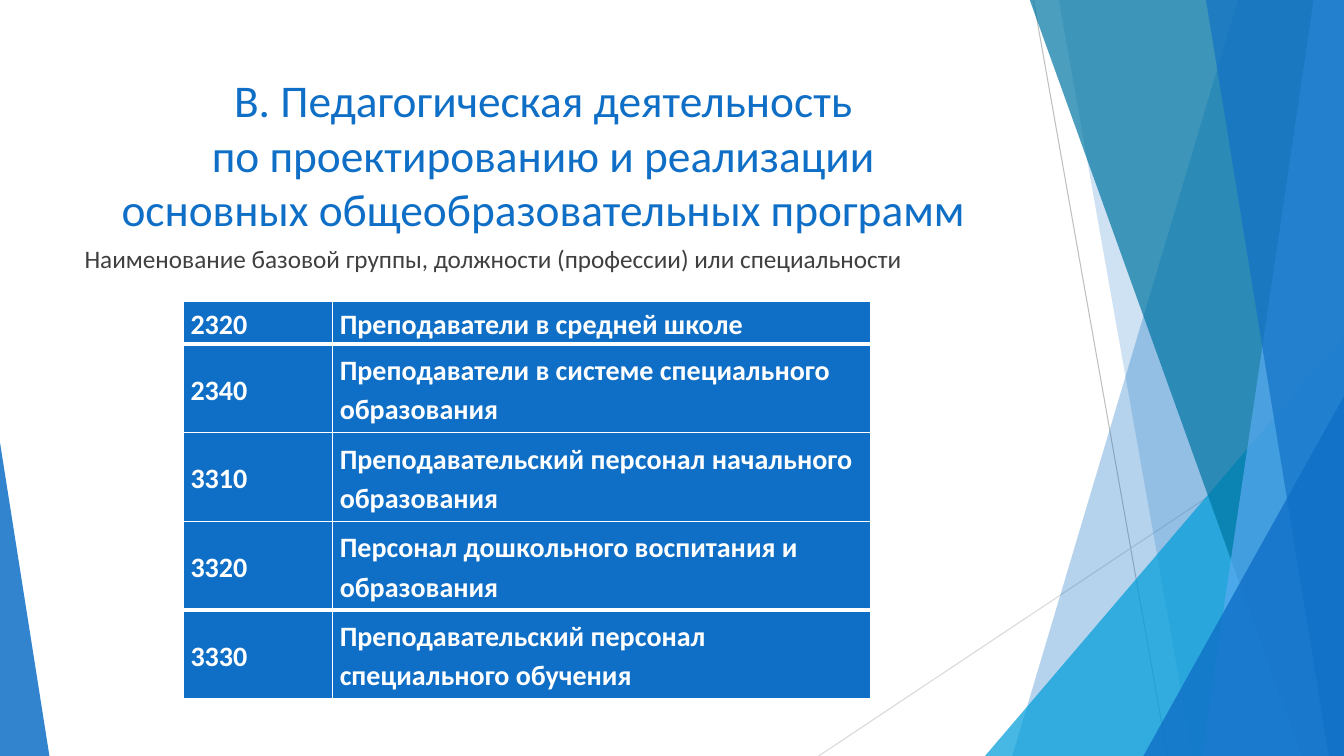
import pptx
import pptx.util
import pptx.dml.color
import pptx.enum.shapes
import pptx.enum.text
import pptx.oxml
import pptx.oxml.ns
from lxml import etree

Inches, Pt = pptx.util.Inches, pptx.util.Pt
ALIGN = pptx.enum.text.PP_ALIGN

TITLE = ("В. Педагогическая деятельность \v"
         "по проектированию и реализации \v"
         "основных общеобразовательных программ ")
SUBTITLE = "Наименование базовой группы, должности (профессии) или специальности"
OCCUPATIONS = [
    ("2320", "Преподаватели в средней школе"),
    ("2340", "Преподаватели в системе специального образования"),
    ("3310", "Преподавательский персонал начального образования"),
    ("3320", "Персонал дошкольного воспитания и образования"),
    ("3330", "Преподавательский персонал специального обучения"),
]

THEME = {
    "font": "Calibri", "title_size": 32.4, "subtitle_size": 18, "table_size": 20,
    "blue": "0F6FC6", "sky": "009DD9", "teal": "0076A3", "light": "59AAF2",
    "text": "404040", "white": "FFFFFF", "gray": "BFBFBF", "pale": "D9D9D9",
}

WIDTH, HEIGHT = 13.33, 7.5
BAND_TOP = -0.01

# Start, end, colour
RAYS = [
    ((10.25, 0), (11.58, HEIGHT), "gray"),
    ((WIDTH, 4.03), (8.12, HEIGHT), "pale"),
]
# Back to front. Bands reach the right edge: (kind, top x, bottom x, colour, opacity %)
# Triangles stand on the bottom edge: (kind, left, top, width, apex, colour, opacity %)
FACETS = [
    ("band", 12.28, 10.04, "blue", 30),
    ("band", 10.5, 11.83, "blue", 20),
    ("triangle", 9.77, 3.33, 3.56, 1, "sky", 72),
    ("band", 10.21, 12.91, "teal", 70),
    ("band", 13.03, 11.92, "light", 70),
    ("band", 11.96, 13.18, "blue", 65),
    ("triangle", 11.34, 3.93, 1.99, 1, "blue", 80),
    ("triangle", 0, 4.39, 0.49, 0, "blue", 85),
]

TABLE_LEFT, TABLE_TOP = 1.82, 2.99
COLUMN_WIDTHS = [1.48, 5.33]
ROW_HEIGHTS = [0.42] + [0.88] * 4
THIN, THICK = 1, 3
# Widths of the horizontal rules, from above the first row to below the last
RULES = [THIN, THICK, THIN, THIN, THICK, THIN]


def color(name):
    return pptx.dml.color.RGBColor.from_string(THEME[name])


def set_font(paragraph, size, color_name, bold=False):
    paragraph.font.name = THEME["font"]
    paragraph.font.size = Pt(size)
    paragraph.font.bold = bold
    paragraph.font.color.rgb = color(color_name)


def paint(facet, color_name, opacity):
    facet.shadow.inherit = False
    facet.line.fill.background()
    facet.fill.solid()
    facet.fill.fore_color.rgb = color(color_name)
    tint = facet.fill._xPr.find(".//" + pptx.oxml.ns.qn("a:srgbClr"))
    etree.SubElement(tint, pptx.oxml.ns.qn("a:alpha"), val=str(opacity * 1000))


def add_ray(shapes, start, end, color_name):
    ray = shapes.add_connector(pptx.enum.shapes.MSO_CONNECTOR.STRAIGHT,
                               *map(Inches, start + end))
    ray.line.color.rgb = color(color_name)
    ray.line.width = Pt(0.75)
    etree.SubElement(ray._element.spPr, pptx.oxml.ns.qn("a:effectLst"))


def add_band(shapes, top_x, bottom_x, color_name, opacity):
    corners = [(top_x, BAND_TOP), (WIDTH, BAND_TOP), (WIDTH, HEIGHT), (bottom_x, HEIGHT)]
    corners = [(Inches(x), Inches(y)) for x, y in corners]
    outline = shapes.build_freeform(*corners[0])
    outline.add_line_segments(corners[1:], close=True)
    paint(outline.convert_to_shape(), color_name, opacity)


def add_triangle(shapes, left, top, width, apex, color_name, opacity):
    triangle = shapes.add_shape(pptx.enum.shapes.MSO_SHAPE.ISOSCELES_TRIANGLE,
                                *map(Inches, (left, top, width, HEIGHT - top)))
    triangle.adjustments[0] = apex
    paint(triangle, color_name, opacity)


def add_text(shapes, box, text, size, color_name, align):
    frame = shapes.add_textbox(*map(Inches, box)).text_frame
    frame.word_wrap = True
    frame.text = text
    frame.paragraphs[0].alignment = align
    set_font(frame.paragraphs[0], size, color_name)


def set_borders(cell, above, below):
    properties = cell._tc.get_or_add_tcPr()
    for side, width in (("L", THIN), ("R", THIN), ("T", above), ("B", below)):
        properties.append(pptx.oxml.parse_xml(
            f'<a:ln{side} {pptx.oxml.ns.nsdecls("a")} w="{Pt(width)}"><a:solidFill>'
            f'<a:srgbClr val="{THEME["white"]}"/></a:solidFill></a:ln{side}>'))


def fill_cell(cell, text, align, above, below):
    cell.text = text
    cell.vertical_anchor = pptx.enum.text.MSO_ANCHOR.MIDDLE
    cell.margin_left = cell.margin_right = Inches(0.07)
    cell.margin_top = cell.margin_bottom = 0
    paragraph = cell.text_frame.paragraphs[0]
    paragraph.alignment = align
    paragraph.line_spacing = 1.15
    set_font(paragraph, THEME["table_size"], "white", bold=True)
    set_borders(cell, above, below)
    cell.fill.solid()
    cell.fill.fore_color.rgb = color("blue")


def add_occupations(shapes):
    table = shapes.add_table(
        len(OCCUPATIONS), len(COLUMN_WIDTHS), Inches(TABLE_LEFT), Inches(TABLE_TOP),
        Inches(sum(COLUMN_WIDTHS)), Inches(sum(ROW_HEIGHTS))).table
    for column, width in zip(table.columns, COLUMN_WIDTHS):
        column.width = Inches(width)
    for r, (occupation, height) in enumerate(zip(OCCUPATIONS, ROW_HEIGHTS)):
        table.rows[r].height = Inches(height)
        for c, (text, align) in enumerate(zip(occupation, (ALIGN.JUSTIFY, ALIGN.LEFT))):
            fill_cell(table.cell(r, c), text, align, RULES[r], RULES[r + 1])


def main():
    deck = pptx.Presentation()
    deck.slide_width, deck.slide_height = Inches(WIDTH), Inches(HEIGHT)
    shapes = deck.slides.add_slide(deck.slide_layouts[6]).shapes
    for ray in RAYS:
        add_ray(shapes, *ray)
    draw = {"band": add_band, "triangle": add_triangle}
    for kind, *geometry in FACETS:
        draw[kind](shapes, *geometry)
    add_text(shapes, (0.74, 0.67, 9.4, 1.44), TITLE,
             THEME["title_size"], "blue", ALIGN.CENTER)
    add_text(shapes, (0.74, 2.36, 9.4, 0.45), SUBTITLE,
             THEME["subtitle_size"], "text", ALIGN.LEFT)
    add_occupations(shapes)
    deck.save("out.pptx")


if __name__ == "__main__":
    main()
